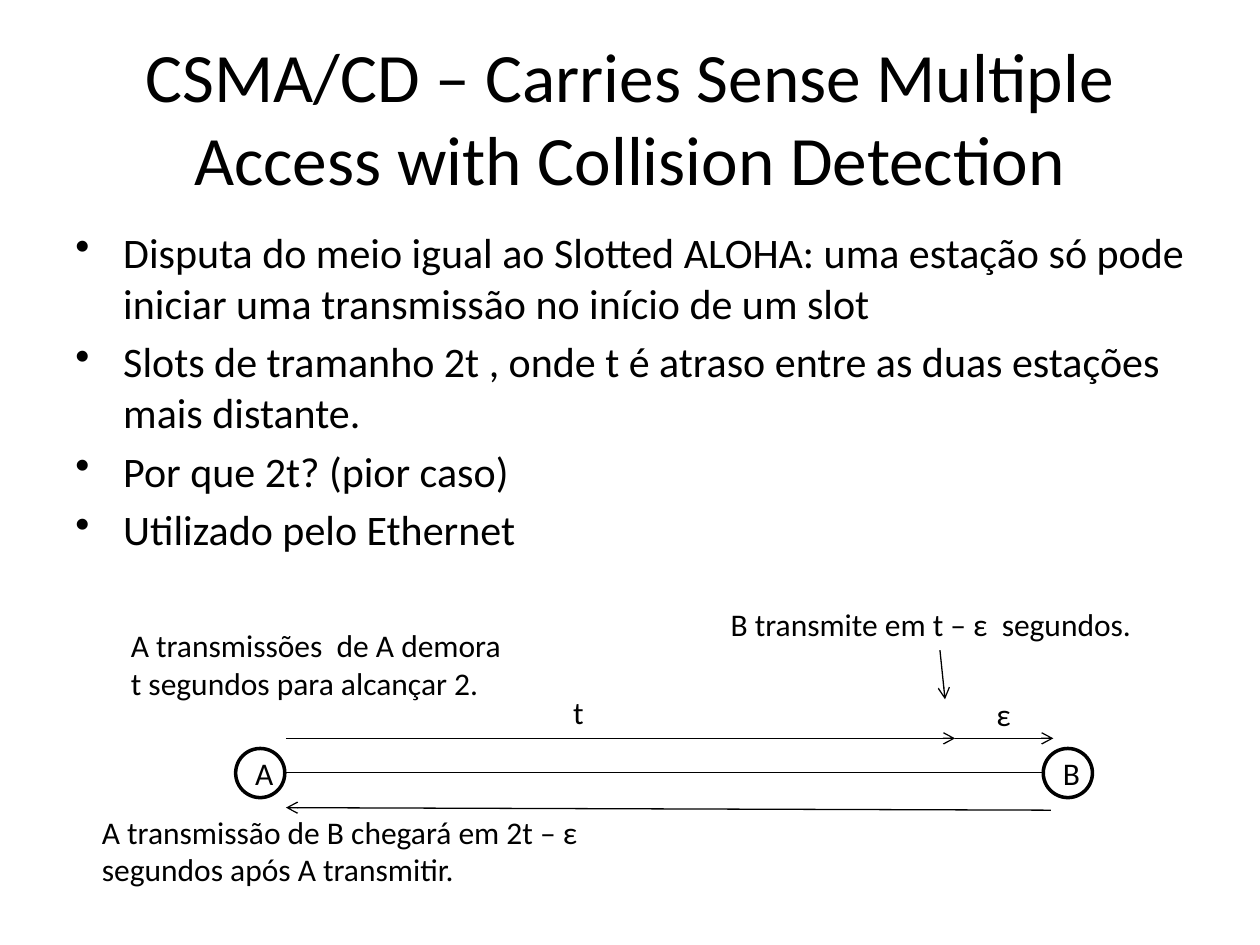
import pptx
import pptx.util
import pptx.dml.color
import pptx.enum.shapes
import pptx.enum.text
import pptx.oxml
import pptx.oxml.ns

Inches = pptx.util.Inches
Pt = pptx.util.Pt
ALIGN = pptx.enum.text.PP_ALIGN
ANCHOR = pptx.enum.text.MSO_ANCHOR
BLACK, WHITE = "000000", "FFFFFF"

TITLE = "CSMA/CD – Carries Sense Multiple Access with Collision Detection"
TOPICS = [
    "Disputa do meio igual ao Slotted ALOHA: uma estação só pode iniciar uma transmissão no início de um slot",
    "Slots de tramanho 2t , onde t é atraso entre as duas estações mais distante.",
    "Por que 2t? (pior caso)",
    "Utilizado pelo Ethernet",
]
STATIONS = [("A", 1.87), ("B", 8.28)]
NOTES = [
    ("A transmissões  de A demora t segundos para alcançar 2.", (0.94, 4.92, 3.2, 0.71)),
    ("t", (4.45, 5.45, 0.3, 0.4)),
    ("ε", (7.81, 5.47, 0.47, 0.4)),
    ("B transmite em t – ε  segundos.", (5.7, 4.75, 3.52, 0.4)),
    ("A transmissão de B chegará em 2t – ε  segundos após A transmitir.", (0.71, 6.4, 4.45, 0.71)),
]
MEDIUM = ((2.27, 6.13), (8.28, 6.13))
SIGNALS = [
    ((2.27, 5.86), (7.58, 5.86)),
    ((7.58, 5.86), (8.36, 5.86)),
    ((8.34, 6.43), (2.27, 6.41)),
    ((7.46, 5.16), (7.5, 5.55)),
]


def color(value):
    """Return the colour for a hex string."""
    return pptx.dml.color.RGBColor.from_string(value)


def apply_format(target, values):
    """Set each attribute named in values on target."""
    for name, value in values.items():
        setattr(target, name, value)


def add_bullet(paragraph):
    """Give a paragraph a hanging bullet."""
    properties = paragraph._p.get_or_add_pPr()
    properties.set("marL", str(Inches(0.38)))
    properties.set("indent", str(Inches(-0.38)))
    bullet_xml = f'<a:buChar {pptx.oxml.ns.nsdecls("a")} char="•"/>'
    properties.append(pptx.oxml.parse_xml(bullet_xml))


def write_text(shape, lines, size, align=ALIGN.LEFT, anchor=ANCHOR.TOP, bulleted=False):
    """Fill a shape with one paragraph per line."""
    frame = shape.text_frame
    apply_format(frame, {"word_wrap": True, "vertical_anchor": anchor})
    frame.text = "\n".join(lines)
    for paragraph in frame.paragraphs:
        paragraph.alignment = align
        apply_format(paragraph.runs[0].font, {"name": "Calibri", "size": Pt(size)})
        paragraph.runs[0].font.color.rgb = color(BLACK)
        if bulleted:
            paragraph.space_before = Pt(0.2 * size)
            add_bullet(paragraph)


def add_text(slide, box, lines, size, **layout):
    """Add a text box at left, top, width and height in inches."""
    textbox = slide.shapes.add_textbox(*map(Inches, box))
    write_text(textbox, lines, size, **layout)


def add_station(slide, label, left):
    """Add a labelled circle for a station."""
    circle = pptx.enum.shapes.MSO_SHAPE.OVAL
    station = slide.shapes.add_shape(circle, *map(Inches, (left, 5.94, 0.39, 0.39)))
    station.shadow.inherit = False
    station.fill.solid()
    station.fill.fore_color.rgb = color(WHITE)
    station.line.color.rgb = color(BLACK)
    station.line.width = Pt(2)
    write_text(station, [label], 18, align=ALIGN.CENTER, anchor=ANCHOR.MIDDLE)


def add_line(slide, start, end, arrow=False):
    """Add a thin line, with an open arrowhead at its end if asked."""
    straight = pptx.enum.shapes.MSO_CONNECTOR.STRAIGHT
    line = slide.shapes.add_connector(straight, *map(Inches, start + end))
    line.line.color.rgb = color(BLACK)
    line.line.width = Pt(0.75)
    namespace = pptx.oxml.ns.nsdecls("a")
    if arrow:
        head = pptx.oxml.parse_xml(f'<a:tailEnd {namespace} type="arrow"/>')
        line.line._get_or_add_ln().append(head)
    line._element.spPr.append(pptx.oxml.parse_xml(f"<a:effectLst {namespace}/>"))


def main():
    """Build the CSMA/CD slide and save it."""
    deck = pptx.Presentation()
    apply_format(deck, {"slide_width": Inches(10), "slide_height": Inches(7.5)})
    slide = deck.slides.add_slide(deck.slide_layouts[6])
    add_text(slide, (0.5, 0.3, 9, 1.25), [TITLE], 39.6, align=ALIGN.CENTER, anchor=ANCHOR.MIDDLE)
    add_text(slide, (0.5, 1.75, 9, 4.95), TOPICS, 24, bulleted=True)
    for label, left in STATIONS:
        add_station(slide, label, left)
    add_line(slide, *MEDIUM)
    for start, end in SIGNALS:
        add_line(slide, start, end, arrow=True)
    for note, box in NOTES:
        add_text(slide, box, [note], 18)
    deck.save("out.pptx")


if __name__ == "__main__":
    main()
